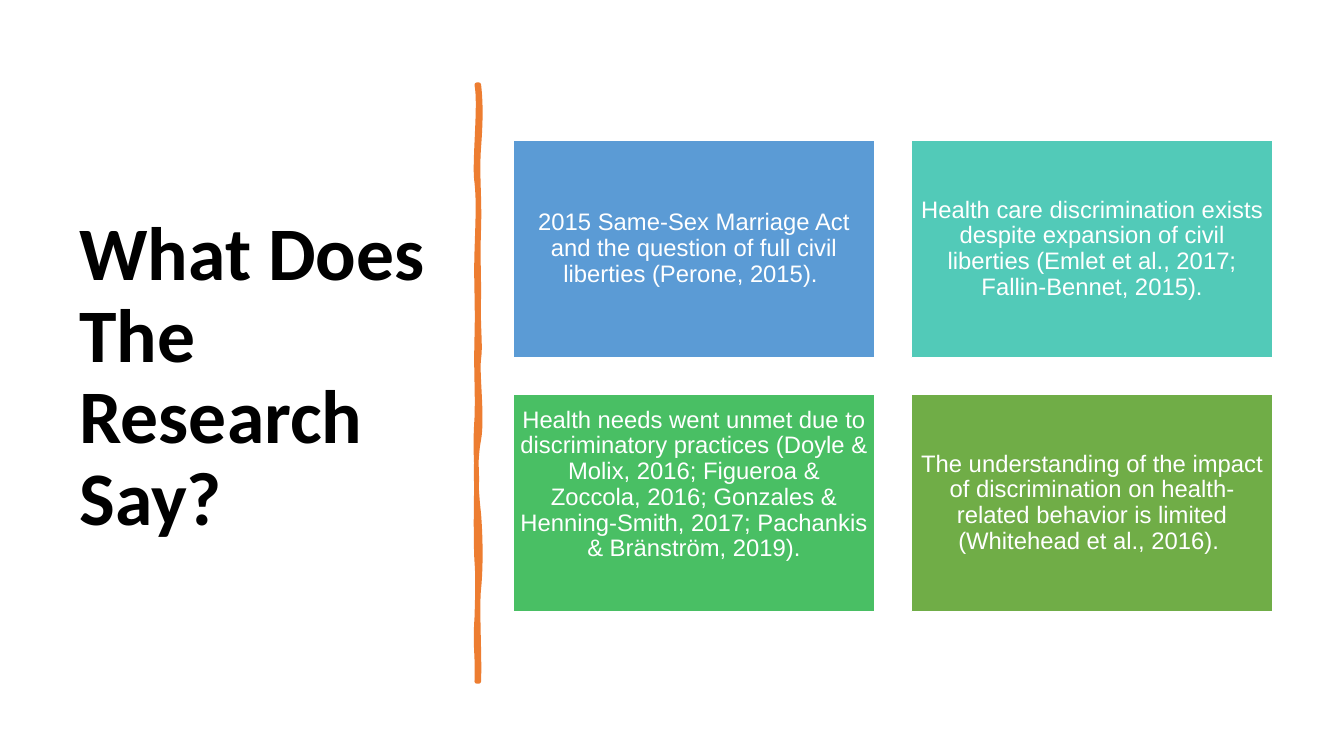
from dataclasses import dataclass
from typing import Any

from lxml import etree
from pptx import Presentation
from pptx import util as u
from pptx.dml import color
from pptx.enum import shapes, text
from pptx.oxml import ns

HUES = {
    "ink": "000000", "white": "FFFFFF", "rule": "ED7D31",
    "blue": "5B9BD5", "teal": "52CAB8", "green": "49BF64", "olive": "70AD47",
}

LEFT, TOP = 5.09, 1.39
WIDE, HIGH = 3.59, 2.16
STEP_X, STEP_Y = 3.95, 2.52
COLS = 2
PAD = 0.07


@dataclass
class Card:
    words: str
    hue: str
    foot: float = PAD


CARDS = [
    Card("2015 Same-Sex Marriage Act and the question of full civil "
         "liberties (Perone, 2015). ", "blue"),
    Card("Health care discrimination exists despite expansion of civil "
         "liberties (Emlet et al., 2017; Fallin-Bennet, 2015).", "teal"),
    Card("Health needs went unmet due to discriminatory practices (Doyle & "
         "Molix, 2016; Figueroa & Zoccola, 2016; Gonzales & Henning-Smith, "
         "2017; Pachankis & Bränström, 2019).", "green", 0.43),
    Card("The understanding of the impact of discrimination on "
         "health-related behavior is limited (Whitehead et al., 2016). ",
         "olive"),
]

START = (4.75, 0.84)
CURVES = [
    (4.77, 1.02, 4.77, 1.19, 4.75, 1.46),
    (4.73, 1.73, 4.76, 1.95, 4.75, 2.26),
    (4.74, 2.57, 4.75, 2.62, 4.75, 2.94),
    (4.74, 3.25, 4.77, 3.42, 4.75, 3.56),
    (4.73, 3.7, 4.79, 4.14, 4.75, 4.36),
    (4.71, 4.57, 4.72, 4.84, 4.75, 5.1),
    (4.77, 5.36, 4.77, 5.64, 4.75, 5.84),
    (4.73, 6.03, 4.76, 6.5, 4.75, 6.76),
    (4.74, 6.76, 4.73, 6.76, 4.73, 6.76),
    (4.74, 6.46, 4.71, 6.44, 4.73, 6.13),
    (4.74, 5.83, 4.74, 5.7, 4.73, 5.57),
    (4.72, 5.44, 4.72, 4.95, 4.73, 4.77),
    (4.73, 4.59, 4.71, 4.45, 4.73, 4.15),
    (4.74, 3.86, 4.72, 3.73, 4.73, 3.35),
    (4.74, 2.98, 4.72, 2.81, 4.73, 2.5),
    (4.74, 2.18, 4.75, 2, 4.73, 1.81),
    (4.7, 1.63, 4.77, 1.04, 4.73, 0.84),
]


def tint(name: str) -> color.RGBColor:
    return color.RGBColor.from_string(HUES[name])


def apply(item: Any, vals: dict[str, Any]) -> None:
    for key, val in vals.items():
        setattr(item, key, val)


def paint(shape: Any, fill: str, edge: str, width: float) -> None:
    shape.shadow.inherit = False
    shape.fill.solid()
    shape.fill.fore_color.rgb = tint(fill)
    shape.line.color.rgb = tint(edge)
    shape.line.width = u.Pt(width)


def write(shape: Any, words: str, hue: str, frame: dict[str, Any],
          para: dict[str, Any], font: dict[str, Any]) -> None:
    body = shape.text_frame
    apply(body, {"word_wrap": True,
                 "vertical_anchor": text.MSO_ANCHOR.MIDDLE, **frame})
    line = body.paragraphs[0]
    line.text = words
    apply(line, {"line_spacing": 0.9, **para})
    face = line.runs[0].font
    apply(face, font)
    face.color.rgb = tint(hue)


def bend(shape: Any) -> None:
    legs = list(shape.element.iter(ns.qn("a:lnTo")))
    for leg, curve in zip(legs, CURVES):
        leg.tag = ns.qn("a:cubicBezTo")
        for num, (x, y) in enumerate((curve[:2], curve[2:4])):
            dot = etree.Element(ns.qn("a:pt"))
            dot.set("x", str(u.Inches(x) - shape.left))
            dot.set("y", str(u.Inches(y) - shape.top))
            leg.insert(num, dot)


def add_title(slide: Any) -> None:
    box = slide.shapes.add_textbox(*map(u.Inches, (0.69, 0.7, 3.74, 6.11)))
    write(box, "What Does The Research Say?", "ink", {}, {},
          {"name": "Calibri", "size": u.Pt(54), "bold": True})


def add_rule(slide: Any) -> None:
    pen = slide.shapes.build_freeform(*map(u.Inches, START))
    ends = [tuple(map(u.Inches, curve[4:])) for curve in CURVES]
    pen.add_line_segments(ends, close=True)
    rule = pen.convert_to_shape()
    bend(rule)
    paint(rule, "rule", "rule", 3.25)


def add_card(slide: Any, card: Card, row: int, col: int) -> None:
    spot = (LEFT + col * STEP_X, TOP + row * STEP_Y, WIDE, HIGH)
    box = slide.shapes.add_shape(shapes.MSO_SHAPE.RECTANGLE,
                                 *map(u.Inches, spot))
    paint(box, card.hue, "white", 1)
    pad = u.Inches(PAD)
    write(box, card.words, "white",
          {"margin_left": pad, "margin_right": pad, "margin_top": pad,
           "margin_bottom": u.Inches(card.foot)},
          {"alignment": text.PP_ALIGN.CENTER},
          {"name": "Arial", "size": u.Pt(17)})


def main() -> None:
    deck = Presentation()
    apply(deck, {"slide_width": u.Inches(40 / 3),
                 "slide_height": u.Inches(7.5)})
    slide = deck.slides.add_slide(deck.slide_layouts[6])
    add_title(slide)
    add_rule(slide)
    for num, card in enumerate(CARDS):
        add_card(slide, card, *divmod(num, COLS))
    deck.save("out.pptx")


if __name__ == "__main__":
    main()
